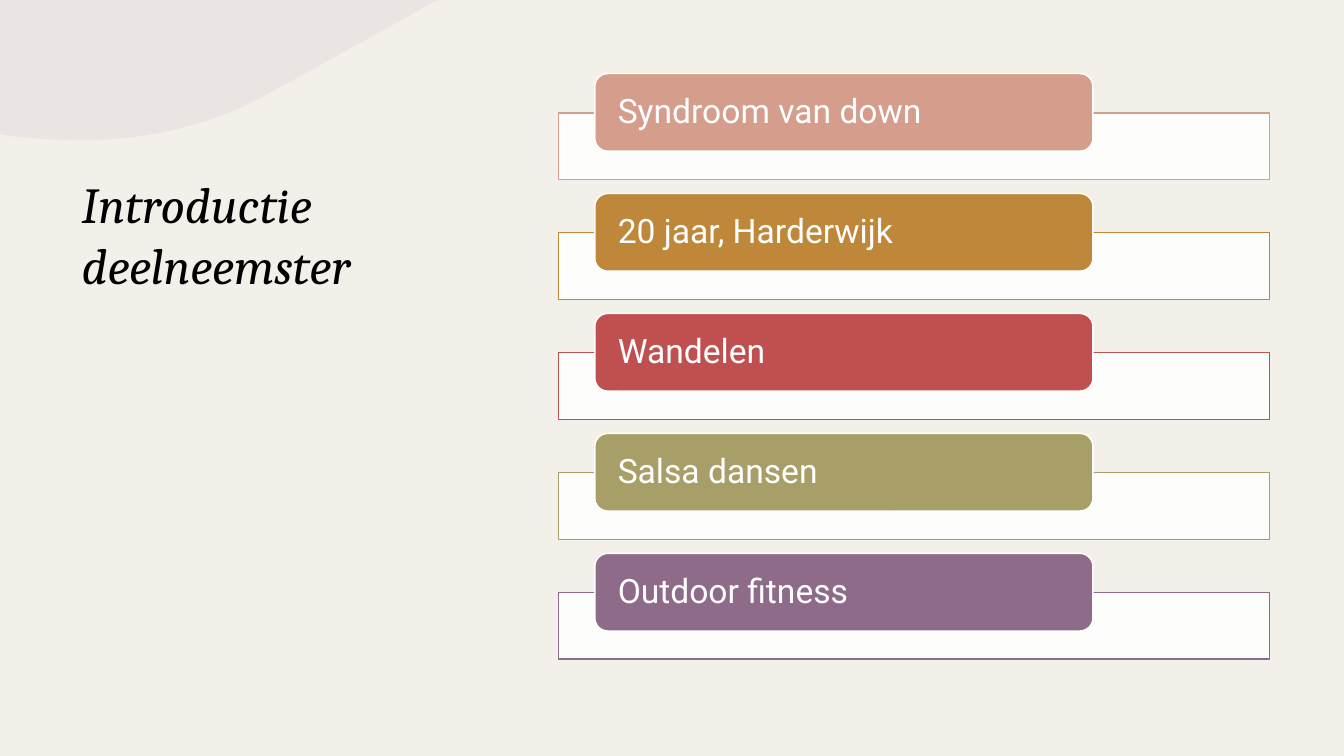
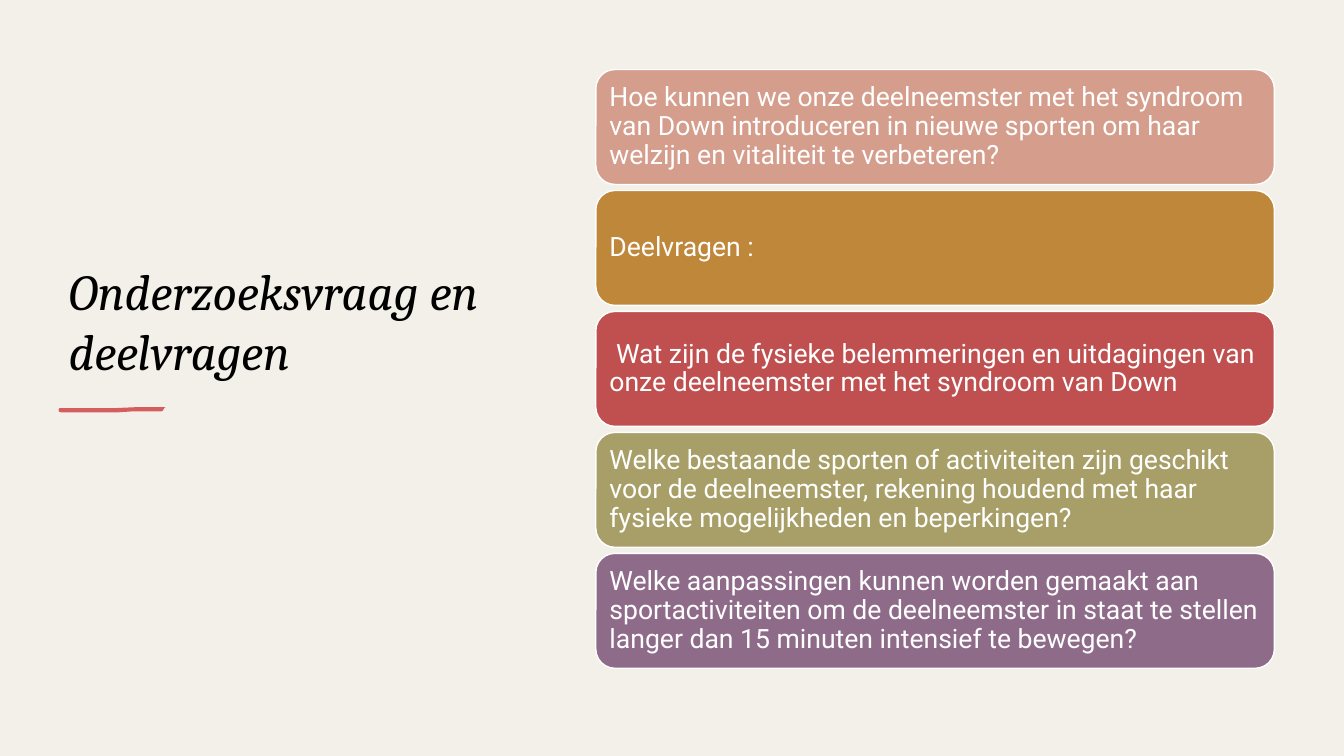
from lxml.etree import SubElement
from pptx import Presentation
from pptx.dml.color import RGBColor
from pptx.enum.shapes import MSO_SHAPE as Shape
from pptx.enum.text import MSO_ANCHOR as Anchor, MSO_AUTO_SIZE as AutoSize, PP_ALIGN as Align
from pptx.oxml.ns import qn
from pptx.util import Inches, Pt

CREAM = RGBColor(0xF3, 0xF0, 0xE9)
BLACK = RGBColor(0x00, 0x00, 0x00)
WHITE = RGBColor(0xFF, 0xFF, 0xFF)
LILAC = RGBColor(0xD2, 0xC4, 0xD0)
CORAL = RGBColor(0xD4, 0x5E, 0x5E)
ACCENTS = [
    RGBColor(0xD4, 0x9D, 0x8C),
    RGBColor(0xBF, 0x87, 0x3A),
    RGBColor(0xC0, 0x50, 0x50),
    RGBColor(0xA8, 0x9F, 0x68),
    RGBColor(0x8F, 0x6B, 0x8A),
]
TITLE_FONT, BODY_FONT = "Cambria", "Roboto"

PROFILE_TITLE = "Introductie deelneemster"
PROFILE = [
    "Syndroom van down",
    "20 jaar, Harderwijk",
    "Wandelen",
    "Salsa dansen",
    "Outdoor fitness",
]
QUESTIONS_TITLE = "Onderzoeksvraag en deelvragen"
QUESTIONS = [
    "Hoe kunnen we onze deelneemster met het syndroom van Down introduceren "
    "in nieuwe sporten om haar welzijn en vitaliteit te verbeteren?",
    "Deelvragen :",
    " Wat zijn de fysieke belemmeringen en uitdagingen van onze deelneemster "
    "met het syndroom van Down",
    "Welke bestaande sporten of activiteiten zijn geschikt voor de deelneemster, "
    "rekening houdend met haar fysieke mogelijkheden en beperkingen?",
    "Welke aanpassingen kunnen worden gemaakt aan sportactiviteiten om de "
    "deelneemster in staat te stellen langer dan 15 minuten intensief te bewegen?",
]

# Outlines in inches: a pair is a corner, three pairs are a Bézier curve.
CORNER_WAVE = [
    (0.74, 1.39),
    ((0.53, 1.39), (0.31, 1.37), (0.1, 1.35)),
    (0, 1.33), (0, 0), (4.35, 0), (4.32, 0.01),
    ((3.77, 0.32), (3.2, 0.63), (2.68, 0.92)),
    ((2.32, 1.12), (1.95, 1.25), (1.58, 1.32)),
    ((1.3, 1.37), (1.02, 1.4), (0.74, 1.39)),
]
BRUSH_STROKE = [
    (0.59, 4.05), (0.77, 4.05), (1.11, 4.05), (1.33, 4.04), (1.64, 4.04),
    ((1.61, 4.06), (1.63, 4.09), (1.57, 4.08)),
    (1.33, 4.08), (1.18, 4.09), (0.61, 4.09),
    ((0.57, 4.09), (0.58, 4.06), (0.59, 4.05)),
]
CURVE_STEPS = 16


def flatten(outline):
    """Turn corners and Bézier curves into a list of points."""
    points = [outline[0]]
    for part in outline[1:]:
        if len(part) == 2:
            points.append(part)
            continue
        controls = (points[-1], *part)
        for step in range(1, CURVE_STEPS + 1):
            t = step / CURVE_STEPS
            weights = ((1 - t) ** 3, 3 * t * (1 - t) ** 2, 3 * t * t * (1 - t), t ** 3)
            points.append(tuple(
                sum(w * c[axis] for w, c in zip(weights, controls)) for axis in (0, 1)))
    return points


def paint(shape, fill, line=None, opacity=100):
    shape.shadow.inherit = False
    shape.fill.solid()
    shape.fill.fore_color.rgb = fill
    if opacity < 100:
        color = shape.element.spPr.find(qn("a:solidFill")).find(qn("a:srgbClr"))
        SubElement(color, qn("a:alpha")).set("val", str(opacity * 1000))
    if line is None:
        shape.line.fill.background()
    else:
        shape.line.color.rgb = line
        shape.line.width = Pt(1)


def add_outline(slide, outline, fill, opacity=100):
    points = [(Inches(x), Inches(y)) for x, y in flatten(outline)]
    builder = slide.shapes.build_freeform(*points[0])
    builder.add_line_segments(points[1:], close=True)
    paint(builder.convert_to_shape(), fill, opacity=opacity)


def add_box(slide, kind, left, top, width, height):
    return slide.shapes.add_shape(
        kind, Inches(left), Inches(top), Inches(width), Inches(height))


def add_label(slide, text, box, color, size, side_inset, end_inset):
    label = add_box(slide, Shape.ROUNDED_RECTANGLE, *box)
    paint(label, color, WHITE)
    frame = label.text_frame
    frame.word_wrap = True
    frame.vertical_anchor = Anchor.MIDDLE
    frame.margin_left = frame.margin_right = Inches(side_inset)
    frame.margin_top = frame.margin_bottom = Inches(end_inset)
    paragraph = frame.paragraphs[0]
    paragraph.text = text
    paragraph.alignment = Align.LEFT
    paragraph.line_spacing = 0.9
    font = paragraph.font
    font.name, font.size, font.color.rgb = BODY_FONT, Pt(size), WHITE


def add_titled_slide(prs, text, box, anchor):
    slide = prs.slides.add_slide(prs.slide_layouts[5])
    title = slide.shapes.title
    title.left, title.top, title.width, title.height = map(Inches, box)
    frame = title.text_frame
    frame.text = text
    frame.word_wrap = True
    frame.auto_size = AutoSize.NONE
    frame.vertical_anchor = anchor
    paragraph = frame.paragraphs[0]
    paragraph.alignment = Align.LEFT
    font = paragraph.font
    font.name, font.size, font.italic = TITLE_FONT, Pt(36), True
    font.color.rgb = BLACK
    return slide


def build_profile(prs):
    slide = add_titled_slide(prs, PROFILE_TITLE, (0.71, 1.67, 4.84, 4.97), Anchor.TOP)
    add_outline(slide, CORNER_WAVE, LILAC, opacity=25)
    for row, (text, color) in enumerate(zip(PROFILE, ACCENTS)):
        top = 0.73 + row * 1.19
        panel = add_box(slide, Shape.RECTANGLE, 5.54, top + 0.39, 7.05, 0.66)
        paint(panel, WHITE, color, opacity=90)
        add_label(slide, text, (5.9, top, 4.94, 0.77), color, 24, 0.19, 0)


def build_questions(prs):
    slide = add_titled_slide(prs, QUESTIONS_TITLE, (0.58, 0.7, 4.67, 3.13), Anchor.BOTTOM)
    add_outline(slide, BRUSH_STROKE, CORAL)
    for row, (text, color) in enumerate(zip(QUESTIONS, ACCENTS)):
        add_label(slide, text, (5.91, 0.69 + row * 1.2, 6.73, 1.14), color, 19, 0.08, 0.08)


def main():
    prs = Presentation()
    prs.slide_width, prs.slide_height = Inches(13.33), Inches(7.5)
    background = prs.slide_master.background.fill
    background.solid()
    background.fore_color.rgb = CREAM
    build_profile(prs)
    build_questions(prs)
    prs.save("out.pptx")


if __name__ == "__main__":
    main()
